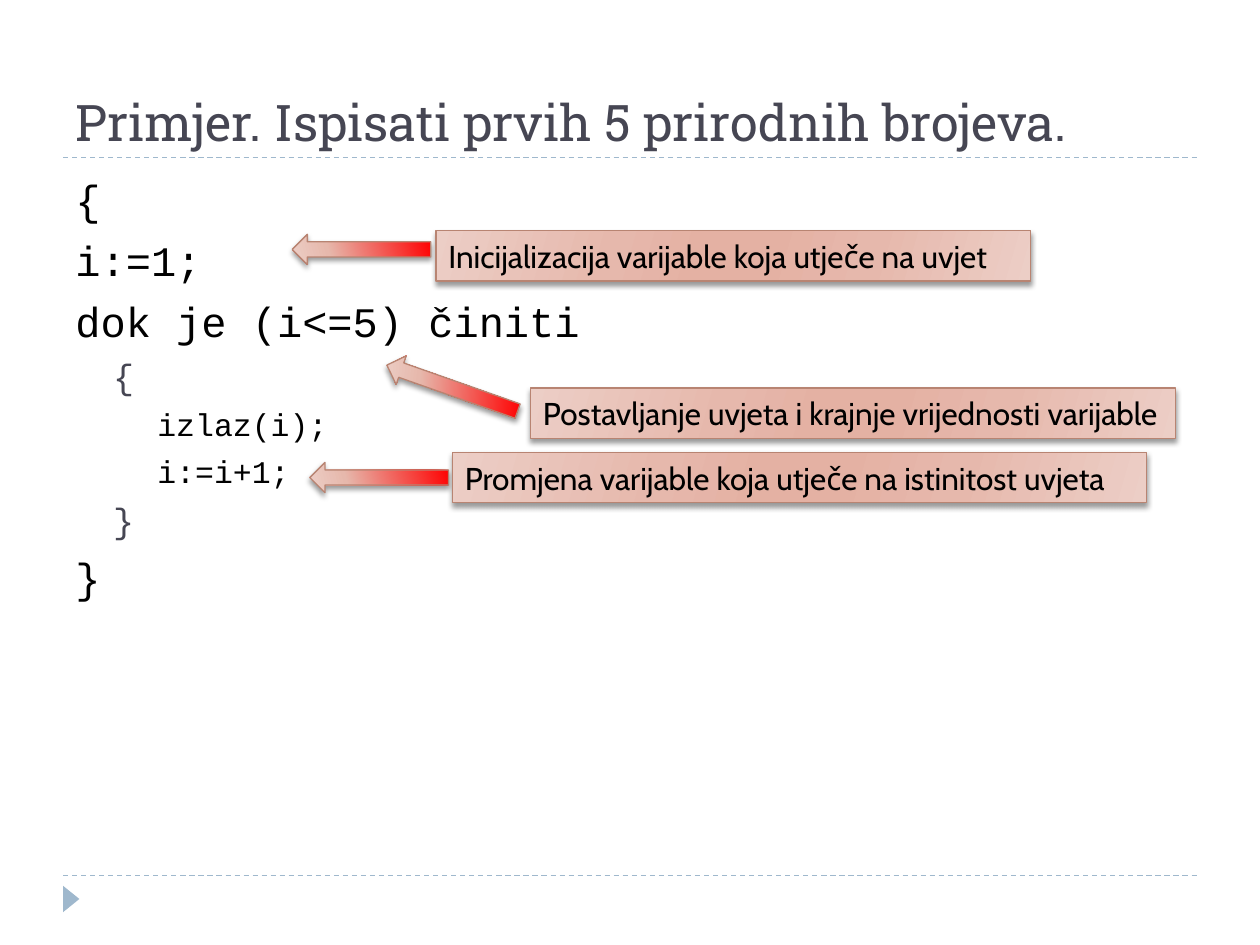
from lxml.etree import SubElement
from pptx import Presentation
from pptx.dml.color import RGBColor
from pptx.enum.dml import MSO_LINE
from pptx.enum.shapes import MSO_CONNECTOR, MSO_SHAPE
from pptx.enum.text import MSO_ANCHOR, MSO_AUTO_SIZE, PP_ALIGN
from pptx.oxml.ns import qn
from pptx.util import Inches, Pt

COLORS = {
    "rule": "9FB8CD", "title": "464653", "code": "000000", "brace": "464653",
    "border": "B88472", "red": "FF0000", "pale": "ECCEC6", "rose": "E6B8AC",
    "deep": "E4B1A3", "shadow": "000000",
}
ARROW_STOPS = [(0, "red"), (73, "rose"), (100, "pale")]
NOTE_STOPS = [(0, "pale"), (30, "rose"), (45, "deep"),
              (55, "deep"), (73, "rose"), (100, "pale")]
LEVELS = [(24, "code", 0, 6), (20, "brace", 0.3, 5), (18, "code", 0.65, 5)]
CODE = [(0, "{"), (0, "i:=1;"), (0, "dok je (i<=5) činiti"), (1, "{"),
        (2, "izlaz(i);"), (2, "i:=i+1;"), (1, "}"), (0, "}")]
ARROWS = [(2.32, 1.86, 0), (3.04, 2.96, 19.4), (2.46, 3.67, 0)]
NOTES = [
    (3.46, 1.83, 4.72, "Inicijalizacija varijable koja utječe na uvjet"),
    (4.21, 3.08, 5.12, "Postavljanje uvjeta i krajnje vrijednosti varijable"),
    (3.59, 3.59, 5.51, "Promjena varijable koja utječe na istinitost uvjeta"),
]


def color(name):
    return RGBColor.from_string(COLORS[name])


def set_text(para, text, size, font, color_name):
    para.text = text
    para.alignment = PP_ALIGN.LEFT
    para.font.size = Pt(size)
    para.font.name = font
    para.font.color.rgb = color(color_name)


def add_rule(page, y):
    rule = page.shapes.add_connector(
        MSO_CONNECTOR.STRAIGHT, Inches(0.5), Inches(y), Inches(9.5), Inches(y))
    rule.line.color.rgb = color("rule")
    rule.line.width = Pt(0.75)
    rule.line.dash_style = MSO_LINE.DASH
    SubElement(rule._element.spPr, qn("a:effectLst"))


def add_marker(page):
    marker = page.shapes.add_shape(
        MSO_SHAPE.ISOSCELES_TRIANGLE, Inches(0.46), Inches(7.07), Inches(0.21), Inches(0.13))
    marker.rotation = 90
    marker.shadow.inherit = False
    marker.fill.solid()
    marker.fill.fore_color.rgb = color("rule")
    marker.line.fill.background()


def add_text_box(page, left, top, width, height):
    box = page.shapes.add_textbox(Inches(left), Inches(top), Inches(width), Inches(height))
    box.text_frame.word_wrap = True
    return box.text_frame


def add_title(page, text):
    frame = add_text_box(page, 0.5, 0.17, 9, 1.08)
    frame.vertical_anchor = MSO_ANCHOR.BOTTOM
    set_text(frame.paragraphs[0], text, 28.8, "Roboto Slab", "title")


def add_code(page):
    frame = add_text_box(page, 0.5, 1.33, 4.42, 3.68)
    for index, (level, text) in enumerate(CODE):
        para = frame.add_paragraph() if index else frame.paragraphs[0]
        size, color_name, indent, space = LEVELS[level]
        set_text(para, text, size, "Courier New", color_name)
        para.level = level
        para.space_before = Pt(space)
        properties = para._p.get_or_add_pPr()
        properties.set("marL", str(Inches(indent)))
        properties.set("indent", "0")


def add_glossy_shape(page, kind, left, top, width, height, stops):
    """Add a shape with a gradient fill, a thin border and a soft shadow."""
    shape = page.shapes.add_shape(
        kind, Inches(left), Inches(top), Inches(width), Inches(height))
    shape.line.color.rgb = color("border")
    shape.line.width = Pt(0.75)
    shape.shadow.inherit = False
    properties = shape._element.spPr

    gradient = SubElement(properties, qn("a:gradFill"), rotWithShape="1")
    stop_list = SubElement(gradient, qn("a:gsLst"))
    for position, name in stops:
        stop = SubElement(stop_list, qn("a:gs"), pos=str(position * 1000))
        SubElement(stop, qn("a:srgbClr"), val=COLORS[name])
    SubElement(gradient, qn("a:lin"), ang=str(16 * 60000), scaled="1")
    properties.find(qn("a:ln")).addprevious(gradient)

    shadow = SubElement(
        properties.find(qn("a:effectLst")), qn("a:outerShdw"), blurRad=str(Pt(3)),
        dist=str(Pt(2)), dir=str(90 * 60000), rotWithShape="0")
    tint = SubElement(shadow, qn("a:srgbClr"), val=COLORS["shadow"])
    SubElement(tint, qn("a:alpha"), val="40000")
    return shape


def add_arrow(page, left, top, angle):
    arrow = add_glossy_shape(
        page, MSO_SHAPE.RIGHT_ARROW, left, top, 1.1, 0.24, ARROW_STOPS)
    arrow.rotation = angle
    arrow._element.spPr.find(qn("a:xfrm")).set("flipH", "1")


def add_note(page, left, top, width, text):
    note = add_glossy_shape(
        page, MSO_SHAPE.RECTANGLE, left, top, width, 0.4, NOTE_STOPS)
    frame = note.text_frame
    frame.word_wrap = True
    frame.auto_size = MSO_AUTO_SIZE.SHAPE_TO_FIT_TEXT
    frame.vertical_anchor = MSO_ANCHOR.TOP
    set_text(frame.paragraphs[0], text, 18, "Cabin", "code")


def main():
    deck = Presentation()
    deck.slide_width, deck.slide_height = Inches(10), Inches(7.5)
    page = deck.slides.add_slide(deck.slide_layouts[6])
    for y in (6.95, 1.25):
        add_rule(page, y)
    add_marker(page)
    add_title(page, "Primjer. Ispisati prvih 5 prirodnih brojeva.")
    add_code(page)
    for arrow in ARROWS:
        add_arrow(page, *arrow)
    for note in NOTES:
        add_note(page, *note)
    deck.save("out.pptx")


if __name__ == "__main__":
    main()
